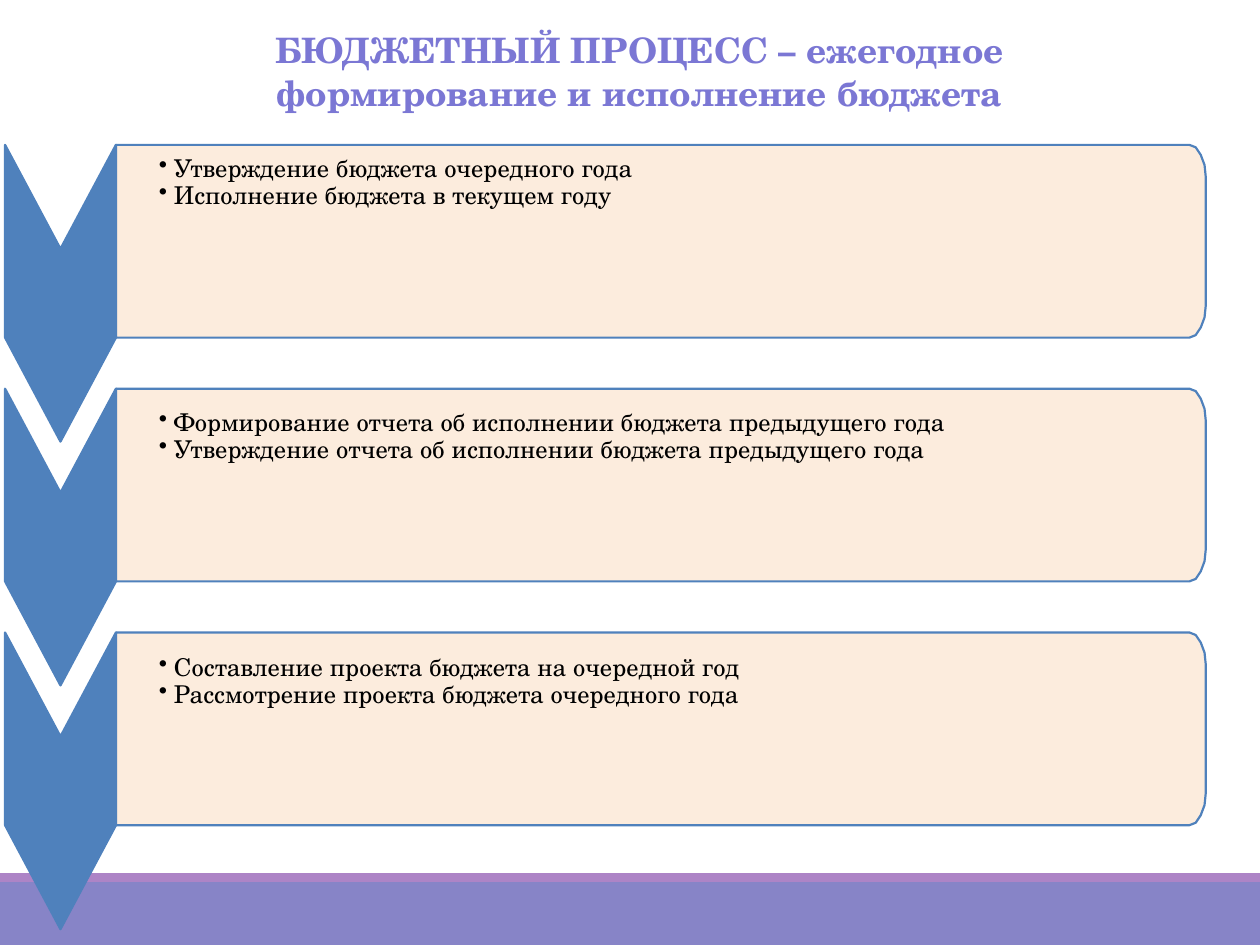
from lxml.etree import SubElement
from pptx import Presentation
from pptx.dml.color import RGBColor
from pptx.enum.shapes import MSO_SHAPE
from pptx.enum.text import MSO_ANCHOR, MSO_AUTO_SIZE, PP_ALIGN
from pptx.oxml.ns import qn
from pptx.util import Inches, Pt

FONT = "TeX Gyre Schola"
COLORS = {
    "title": "7B77D4",
    "footer": "8784C7",
    "stripe": "AD84C6",
    "chevron": "4F81BC",
    "panel": "FCEADA",
    "text": "000000",
}
WIDTH, HEIGHT = 10, 7.5
ROW_TOP, ROW_PITCH, ROW_HEIGHT = 1.15, 1.935, 1.53
CHEVRON_LEFT, CHEVRON_RIGHT, CHEVRON_DEPTH = 0.04, 0.92, 0.825
PANEL_RIGHT = 9.57
CORNER = [(0.13, 0), (0.08, 0.02), (0.04, 0.08), (0.01, 0.16), (0, 0.26)]
TITLE = "БЮДЖЕТНЫЙ ПРОЦЕСС – ежегодное формирование и исполнение бюджета"
STAGES = [
    (0.08, ["Утверждение бюджета очередного года",
            "Исполнение бюджета в текущем году"]),
    (0.16, ["Формирование отчета об исполнении бюджета предыдущего года",
            "Утверждение отчета об исполнении бюджета предыдущего года"]),
    (0.17, ["Составление проекта бюджета на очередной год",
            "Рассмотрение проекта бюджета очередного года"]),
]


def color(name):
    return RGBColor.from_string(COLORS[name])


def paint(shape, fill, line=None):
    shape.shadow.inherit = False
    shape.fill.solid()
    shape.fill.fore_color.rgb = color(fill)
    if line:
        shape.line.color.rgb = color(line)
        shape.line.width = Pt(1.25)
    else:
        shape.line.fill.background()


def add_band(slide, top, height, fill):
    band = slide.shapes.add_shape(
        MSO_SHAPE.RECTANGLE, 0, Inches(top), Inches(WIDTH), Inches(height))
    paint(band, fill)


def add_outline(slide, points, fill):
    start, *rest = [(Inches(x), Inches(y)) for x, y in points]
    builder = slide.shapes.build_freeform(*start)
    builder.add_line_segments(rest, close=True)
    shape = builder.convert_to_shape()
    paint(shape, fill, "chevron")
    return shape


def add_chevron(slide, top):
    middle = (CHEVRON_LEFT + CHEVRON_RIGHT) / 2
    bottom = top + ROW_HEIGHT
    add_outline(slide, [
        (CHEVRON_LEFT, top), (middle, top + CHEVRON_DEPTH), (CHEVRON_RIGHT, top),
        (CHEVRON_RIGHT, bottom), (middle, bottom + CHEVRON_DEPTH),
        (CHEVRON_LEFT, bottom),
    ], "chevron")


def add_bullet(paragraph):
    properties = paragraph._p.get_or_add_pPr()
    properties.set("marL", str(Inches(0.14)))
    properties.set("indent", str(-Inches(0.12)))
    SubElement(properties, qn("a:buChar")).set("char", "•")


def add_panel(slide, top, inset, lines):
    bottom = top + ROW_HEIGHT
    upper = [(PANEL_RIGHT - x, top + y) for x, y in CORNER]
    lower = [(PANEL_RIGHT - x, bottom - y) for x, y in reversed(CORNER)]
    panel = add_outline(
        slide,
        [(CHEVRON_RIGHT, top), *upper, *lower, (CHEVRON_RIGHT, bottom)],
        "panel")
    fill_color = panel.fill._xPr.find(qn("a:solidFill"))[0]
    SubElement(fill_color, qn("a:alpha")).set("val", "90000")

    frame = panel.text_frame
    frame.word_wrap = True
    frame.vertical_anchor = MSO_ANCHOR.TOP
    frame.margin_left, frame.margin_top = Inches(0.32), Inches(inset)
    frame.margin_right = frame.margin_bottom = 0
    frame.text = "\n".join(lines)
    for paragraph in frame.paragraphs:
        paragraph.alignment = PP_ALIGN.LEFT
        paragraph.line_spacing = Pt(15.6)
        paragraph.font.name = FONT
        paragraph.font.size = Pt(14)
        paragraph.font.color.rgb = color("text")
        add_bullet(paragraph)


def set_title(slide):
    title = slide.shapes.title
    title.left, title.top = Inches(1.69), Inches(0.22)
    title.width, title.height = Inches(6.77), Inches(0.99)
    frame = title.text_frame
    frame.text = TITLE
    frame.word_wrap = True
    frame.auto_size = MSO_AUTO_SIZE.NONE
    frame.vertical_anchor = MSO_ANCHOR.TOP
    frame.margin_left = frame.margin_right = frame.margin_bottom = 0
    frame.margin_top = Inches(0.01)
    paragraph = frame.paragraphs[0]
    paragraph.alignment = PP_ALIGN.CENTER
    paragraph.space_before = Pt(1)
    paragraph.font.name = FONT
    paragraph.font.size = Pt(20)
    paragraph.font.bold = True
    paragraph.font.color.rgb = color("title")


def main():
    presentation = Presentation()
    presentation.slide_width = Inches(WIDTH)
    presentation.slide_height = Inches(HEIGHT)
    slide = presentation.slides.add_slide(presentation.slide_layouts[5])
    set_title(slide)
    add_band(slide, 7, 0.5, "footer")
    add_band(slide, 6.93, 0.07, "stripe")
    for index, (inset, lines) in enumerate(STAGES):
        top = ROW_TOP + index * ROW_PITCH
        add_chevron(slide, top)
        add_panel(slide, top, inset, lines)
    presentation.save("out.pptx")


if __name__ == "__main__":
    main()
